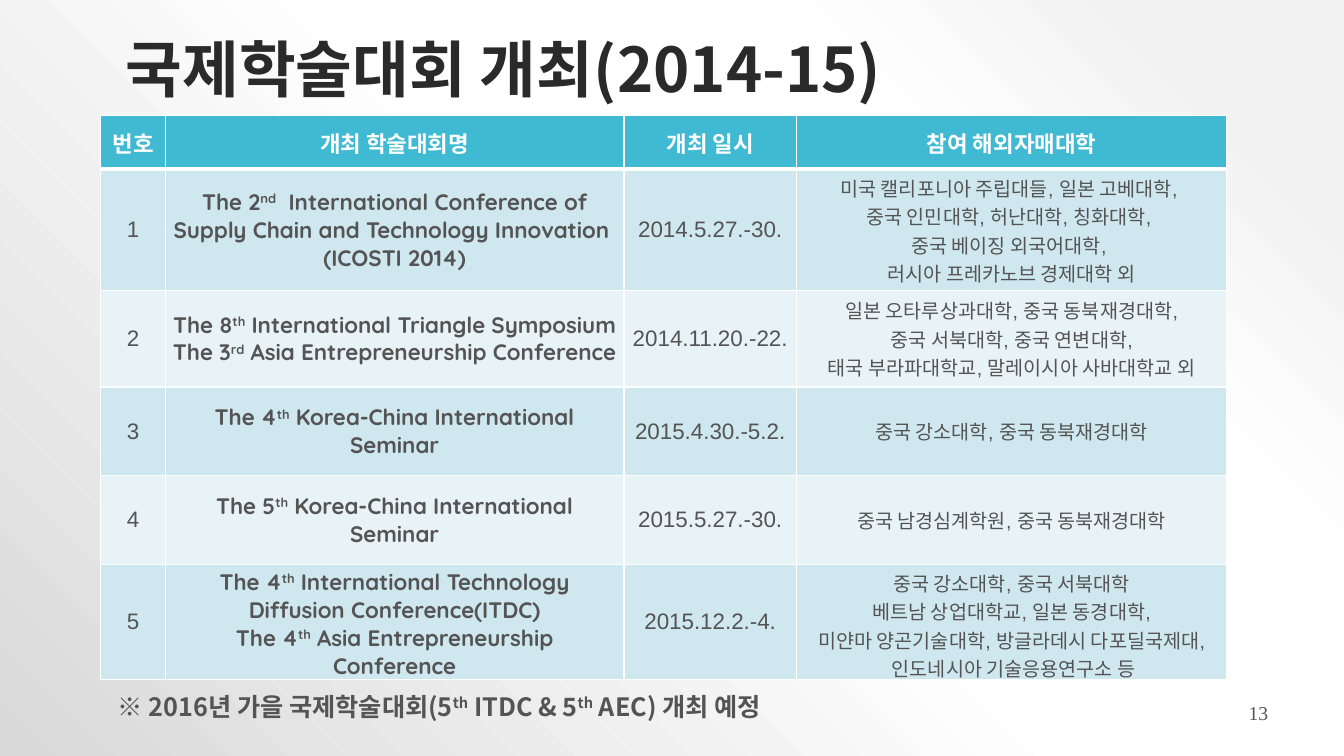
from pptx import Presentation
from pptx.dml.color import RGBColor
from pptx.enum.text import MSO_ANCHOR, PP_ALIGN
from pptx.oxml import parse_xml
from pptx.oxml.ns import nsdecls, qn
from pptx.util import Inches, Pt

WHITE = RGBColor(0xFF, 0xFF, 0xFF)
INK = RGBColor(0x2A, 0x2A, 0x2A)
GRAY = RGBColor(0x54, 0x54, 0x54)
TEAL = RGBColor(0x40, 0xBA, 0xD2)
BAND_DARK = RGBColor(0xCF, 0xE7, 0xEE)
BAND_LIGHT = RGBColor(0xE8, 0xF3, 0xF7)
PALE = RGBColor(0xF2, 0xF2, 0xF2)
SILVER = RGBColor(0xD9, 0xD9, 0xD9)
BACKDROP = [(10, PALE), (28, WHITE), (48, WHITE), (100, SILVER)]

KOREAN, BODY, NAMES, SERIF = "Noto Sans CJK KR", "Arial", "Quicksand", "Times New Roman"

# Column and row sizes in percent of the slide's width and height
COLUMNS = [4.8, 34.13, 12.83, 32.03]
ROWS = [7.07, 16, 12.8, 11.73, 11.73, 10.53]
# Font, size and bold of each body column
COLUMN_STYLES = [(BODY, 16, False), (NAMES, 16, True), (BODY, 16, False), (BODY, 14, False)]

# Text between ^ marks is superscript; each line is a paragraph
HEADER = ["번호", "개최 학술대회명", "개최 일시", "참여 해외자매대학"]
CONFERENCES = [
    ("The 2^nd^  International Conference of Supply Chain and Technology Innovation \n(ICOSTI 2014)",
     "2014.5.27.-30.",
     "미국 캘리포니아 주립대들, 일본 고베대학, \n중국 인민대학, 허난대학, 칭화대학, \n"
     "중국 베이징 외국어대학, \n러시아 프레카노브 경제대학 외"),
    ("The 8^th^ International Triangle Symposium\nThe 3^rd^ Asia Entrepreneurship Conference",
     "2014.11.20.-22.",
     "일본 오타루상과대학, 중국 동북재경대학,\n중국 서북대학, 중국 연변대학,\n"
     "태국 부라파대학교, 말레이시아 사바대학교 외"),
    ("The 4^th^ Korea-China International Seminar", "2015.4.30.-5.2.",
     "중국 강소대학, 중국 동북재경대학"),
    ("The 5^th^ Korea-China International Seminar", "2015.5.27.-30.",
     "중국 남경심계학원, 중국 동북재경대학"),
    ("The 4^th^ International Technology Diffusion Conference(ITDC)\n"
     "The 4^th^ Asia Entrepreneurship Conference",
     "2015.12.2.-4.",
     "중국 강소대학, 중국 서북대학\n베트남 상업대학교, 일본 동경대학,\n"
     "미얀마 양곤기술대학, 방글라데시 다포딜국제대,\n 인도네시아 기술응용연구소 등"),
]


class Deck:
    """Holds the style and the current slide; places are percents of its size."""

    def __init__(self):
        self.prs = Presentation()
        self.prs.slide_width, self.prs.slide_height = Inches(13.33), Inches(7.5)
        self.s = self.prs.slides.add_slide(self.prs.slide_layouts[6])

    def x(self, percent):
        return int(self.prs.slide_width * percent / 100)

    def y(self, percent):
        return int(self.prs.slide_height * percent / 100)

    def box(self, left, top, width, height):
        return self.x(left), self.y(top), self.x(width), self.y(height)

    def background(self, stops):
        fill = self.s.background.fill
        fill.gradient()
        grad = self.s.element.find(".//" + qn("a:gradFill"))
        gs = "".join(f'<a:gs pos="{pos * 1000}"><a:srgbClr val="{color}"/></a:gs>'
                     for pos, color in stops)
        grad.getparent().replace(grad, parse_xml(
            f'<a:gradFill {nsdecls("a")} rotWithShape="1"><a:gsLst>{gs}</a:gsLst>'
            '<a:path path="circle"><a:fillToRect l="100000" b="100000"/></a:path></a:gradFill>'))

    def paragraphs(self, tf, text, font, size, color, bold=False, align=PP_ALIGN.LEFT, spacing=None):
        for i, line in enumerate(text.split("\n")):
            p = tf.add_paragraph() if i else tf.paragraphs[0]
            p.alignment, p.line_spacing = align, spacing
            p.font.name, p.font.size, p.font.bold = font, Pt(size), bold
            p.font.color.rgb = color
            latin = p.font._element.find(qn("a:latin"))
            latin.addnext(parse_xml(f'<a:ea {nsdecls("a")} typeface="{KOREAN}"/>'))
            for j, part in enumerate(line.split("^")):
                r = p.add_run()
                r.text = part
                if j % 2:
                    r.font._element.set("baseline", "30000")

    def text(self, place, text, *style, anchor=MSO_ANCHOR.TOP, wrap=True, **options):
        tf = self.s.shapes.add_textbox(*self.box(*place)).text_frame
        tf.word_wrap, tf.vertical_anchor = wrap, anchor
        self.paragraphs(tf, text, *style, **options)

    def cell(self, cell, text, fill, bottom, *style):
        cell.fill.solid()
        cell.fill.fore_color.rgb = fill
        cell.vertical_anchor = MSO_ANCHOR.MIDDLE
        cell.margin_left = cell.margin_right = Inches(0.07)
        cell.margin_top = cell.margin_bottom = Inches(0.04)
        self.paragraphs(cell.text_frame, text, *style, align=PP_ALIGN.CENTER)
        tc_pr = cell._tc.get_or_add_tcPr()
        for i, side in enumerate("LRTB"):
            width = Pt(bottom if side == "B" else 1)
            tc_pr.insert(i, parse_xml(
                f'<a:ln{side} {nsdecls("a")} w="{width}"><a:solidFill>'
                f'<a:srgbClr val="{WHITE}"/></a:solidFill></a:ln{side}>'))

    def table(self, left, top, header, records):
        place = self.box(left, top, sum(COLUMNS), sum(ROWS))
        table = self.s.shapes.add_table(len(ROWS), len(COLUMNS), *place).table
        for column, width in zip(table.columns, COLUMNS):
            column.width = self.x(width)
        for row, height in zip(table.rows, ROWS):
            row.height = self.y(height)
        for c, title in enumerate(header):
            self.cell(table.cell(0, c), title, TEAL, 3, BODY, 16, WHITE, True)
        for n, record in enumerate(records, 1):
            band = BAND_DARK if n % 2 else BAND_LIGHT
            for c, (text, style) in enumerate(zip((str(n), *record), COLUMN_STYLES)):
                font, size, bold = style
                self.cell(table.cell(n, c), text, band, 1, font, size, GRAY, bold)


def main():
    deck = Deck()
    deck.background(BACKDROP)
    # Title
    deck.text((8.63, 0, 90, 19.33), "국제학술대회 개최(2014-15)", KOREAN, 44, INK, True,
              anchor=MSO_ANCHOR.MIDDLE, spacing=0.9)
    # Slide number
    deck.text((79.5, 92, 15.6, 6.67), "13", SERIF, 14, GRAY, align=PP_ALIGN.RIGHT)
    # Conference table
    deck.table(7.5, 15.33, HEADER, CONFERENCES)
    # Note on the next conference
    deck.text((8.03, 91.2, 54.23, 4.93), "※ 2016년 가을 국제학술대회(5^th^ ITDC & 5^th^ AEC) 개최 예정",
              KOREAN, 18, GRAY, True, wrap=False, spacing=0.9)
    deck.prs.save("out.pptx")


if __name__ == "__main__":
    main()
